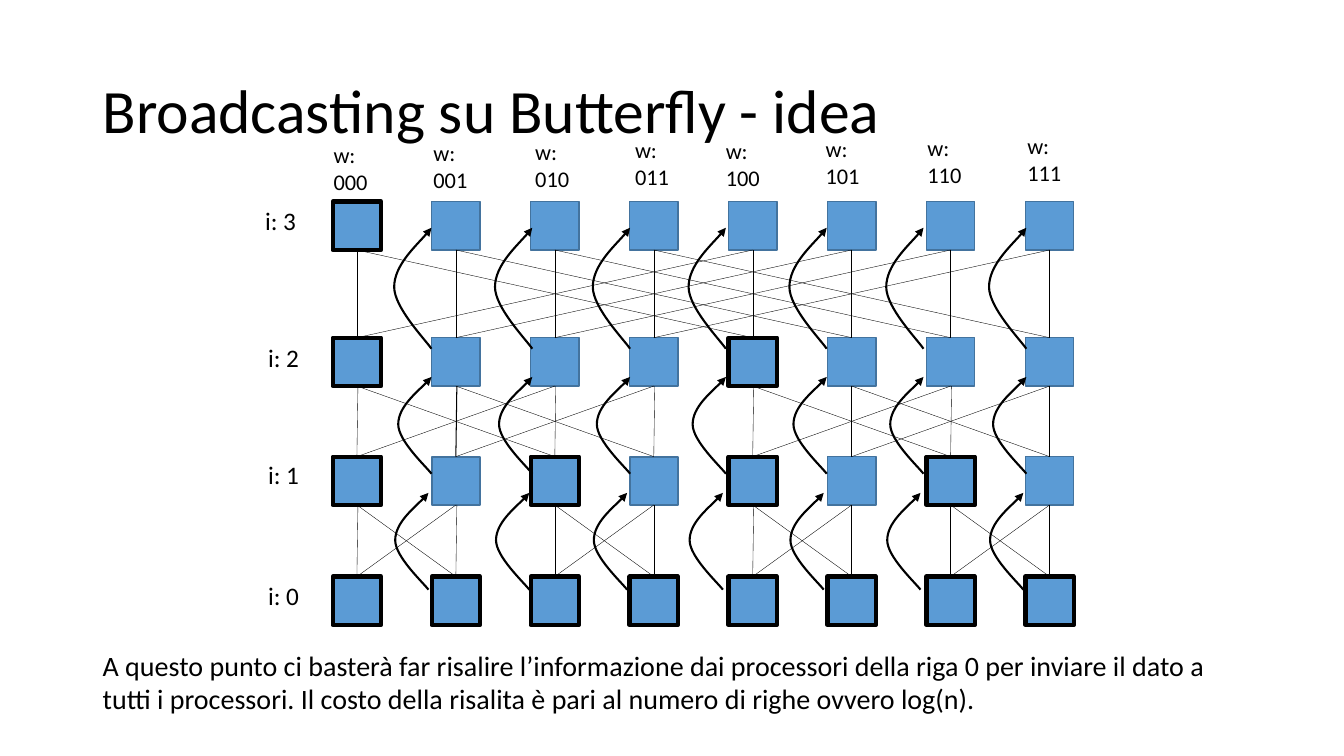
from dataclasses import dataclass

from lxml.etree import SubElement
from pptx import Presentation
from pptx.dml.color import RGBColor
from pptx.enum.shapes import MSO_CONNECTOR, MSO_SHAPE
from pptx.enum.text import MSO_ANCHOR
from pptx.oxml.ns import qn
from pptx.util import Inches, Pt


@dataclass(frozen=True)
class Theme:
    font: str = "Calibri"
    ink: RGBColor = RGBColor(0x00, 0x00, 0x00)
    node: RGBColor = RGBColor(0x5B, 0x9B, 0xD5)
    node_border: RGBColor = RGBColor(0x43, 0x73, 0x9E)
    title_size: float = 44
    body_size: float = 20
    level_size: float = 18
    column_size: float = 16
    node_line: float = 1
    strong_node_line: float = 1.5
    informed_line: float = 3
    edge_line: float = 0.25
    strong_edge_line: float = 0.75
    arrow_line: float = 1.5


THEME = Theme()

COLUMNS = 8
NODE_SIZE = 0.48
FIRST_LEFT = 3.3
LAST_LEFT = 10.17
COLUMN_PITCH = (LAST_LEFT - FIRST_LEFT) / (COLUMNS - 1)
LEVEL_TOPS = [5.72, 4.53, 3.35, 2.0]

# Exceptions, as (level, column)
STRONG_NODES = {(1, 1), (1, 3)}
STRONG_EDGES = {(1, 1), (1, 5), (2, 6)}
LEANING_EDGES = {(0, 0), (0, 1), (0, 4), (1, 0), (1, 1), (1, 2), (1, 3), (1, 4), (1, 6)}
LEAN = 0.01

LEVEL_LABELS = [(2.56, 5.71), (2.56, 4.51), (2.56, 3.35), (2.53, 1.99)]
COLUMN_LABELS = [
    (3.21, 1.35), (4.2, 1.33), (5.21, 1.32), (6.2, 1.3),
    (7.1, 1.31), (8.09, 1.29), (9.1, 1.28), (10.09, 1.26),
]

ARROW_RIGHTS = [4.25, 5.25, 6.22, 7.17, 8.17, 9.13, 10.15]
# Shift from ARROW_RIGHTS, bottom, top and depth of the arrows above each level
ARROW_LEVELS = [(0, 5.85, 4.89, 0.33), (0.03, 4.7, 3.74, 0.33), (0.03, 3.46, 2.26, 0.37)]
# Points of two Bezier curves after the start, as fractions of depth and height
ARROW_CURVE = [(0.18, 0.08), (1, 0.34), (1, 0.51), (1, 0.69), (0.21, 0.91), (0, 1)]


def add_text(slide, text, left, top, width, height, size, anchor=MSO_ANCHOR.TOP, spacing=None):
    frame = slide.shapes.add_textbox(
        Inches(left), Inches(top), Inches(width), Inches(height)
    ).text_frame
    frame.word_wrap = True
    frame.vertical_anchor = anchor
    paragraph = frame.paragraphs[0]
    paragraph.line_spacing = spacing
    run = paragraph.add_run()
    run.text = text
    run.font.name = THEME.font
    run.font.size = Pt(size)
    run.font.color.rgb = THEME.ink


def style_line(line, color, width):
    line.color.rgb = color
    line.width = Pt(width)


def node_center(column):
    return FIRST_LEFT + column * COLUMN_PITCH + NODE_SIZE / 2


def add_node(slide, level, column):
    """Draw a processor, with a heavy border if the broadcast has reached it."""
    shape = slide.shapes.add_shape(
        MSO_SHAPE.RECTANGLE,
        Inches(FIRST_LEFT + column * COLUMN_PITCH),
        Inches(LEVEL_TOPS[level]),
        Inches(NODE_SIZE),
        Inches(NODE_SIZE),
    )
    shape.shadow.inherit = False
    shape.fill.solid()
    shape.fill.fore_color.rgb = THEME.node
    if column % 2**level == 0:
        style_line(shape.line, THEME.ink, THEME.informed_line)
    else:
        strong = (level, column) in STRONG_NODES
        width = THEME.strong_node_line if strong else THEME.node_line
        style_line(shape.line, THEME.node_border, width)


def add_edge(slide, level, column, upper_column, width, lean=0):
    """Join a node to a node of the level above."""
    connector = slide.shapes.add_connector(
        MSO_CONNECTOR.STRAIGHT,
        Inches(node_center(column)),
        Inches(LEVEL_TOPS[level]),
        Inches(node_center(upper_column) + lean),
        Inches(LEVEL_TOPS[level + 1] + NODE_SIZE),
    )
    style_line(connector.line, THEME.ink, width)
    SubElement(connector._element.spPr, qn("a:effectLst"))


def bend_segments(shape):
    """Turn each three straight segments of a freeform into one Bezier curve."""
    outline = next(shape._element.iter(qn("a:path")))
    segments = outline.findall(qn("a:lnTo"))
    for index in range(0, len(segments), 3):
        curve = SubElement(outline, qn("a:cubicBezTo"))
        for segment in segments[index:index + 3]:
            curve.append(segment[0])
            outline.remove(segment)


def add_curved_arrow(slide, right, bottom, top, depth):
    """Draw an upward arrow that bulges to the left by depth."""
    vertices = [
        (Inches(right - depth * x), Inches(bottom - (bottom - top) * y))
        for x, y in ARROW_CURVE
    ]
    builder = slide.shapes.build_freeform(Inches(right), Inches(bottom))
    builder.add_line_segments(vertices, close=False)
    shape = builder.convert_to_shape()
    bend_segments(shape)
    shape.shadow.inherit = False
    shape.fill.background()
    style_line(shape.line, THEME.ink, THEME.arrow_line)
    SubElement(shape._element.spPr.get_or_add_ln(), qn("a:tailEnd"), type="triangle")


def add_butterfly(slide):
    for level in reversed(range(len(LEVEL_TOPS))):
        for column in range(COLUMNS):
            add_node(slide, level, column)
    for level in range(len(LEVEL_TOPS) - 1):
        for column in range(COLUMNS):
            strong = (level, column) in STRONG_EDGES
            width = THEME.strong_edge_line if strong else THEME.edge_line
            lean = LEAN if (level, column) in LEANING_EDGES else 0
            add_edge(slide, level, column, column, width, lean)
            add_edge(slide, level, column, column ^ 2**level, THEME.edge_line)


def add_labels(slide):
    for level, (left, top) in enumerate(LEVEL_LABELS):
        add_text(slide, f"i: {level}", left, top, 0.71, 0.53, THEME.level_size)
    for column, (left, top) in enumerate(COLUMN_LABELS):
        add_text(slide, f"w: {column:03b}", left, top, 0.71, 0.53, THEME.column_size)


def main():
    presentation = Presentation()
    presentation.slide_width = Inches(13.33)
    presentation.slide_height = Inches(7.5)
    slide = presentation.slides.add_slide(presentation.slide_layouts[6])

    add_text(
        slide, "Broadcasting su Butterfly - idea", 0.92, 0.4, 11.5, 1.45,
        THEME.title_size, MSO_ANCHOR.MIDDLE, 0.9,
    )
    add_butterfly(slide)
    add_labels(slide)
    for right in ARROW_RIGHTS:
        for shift, bottom, top, depth in ARROW_LEVELS:
            add_curved_arrow(slide, right + shift, bottom, top, depth)
    add_text(
        slide,
        "A questo punto ci basterà far risalire l’informazione dai processori della riga 0 "
        "per inviare il dato a tutti i processori. Il costo della risalita è pari al numero "
        "di righe ovvero log(n).",
        0.92, 6.38, 11.51, 0.77, THEME.body_size,
    )
    presentation.save("out.pptx")


if __name__ == "__main__":
    main()
